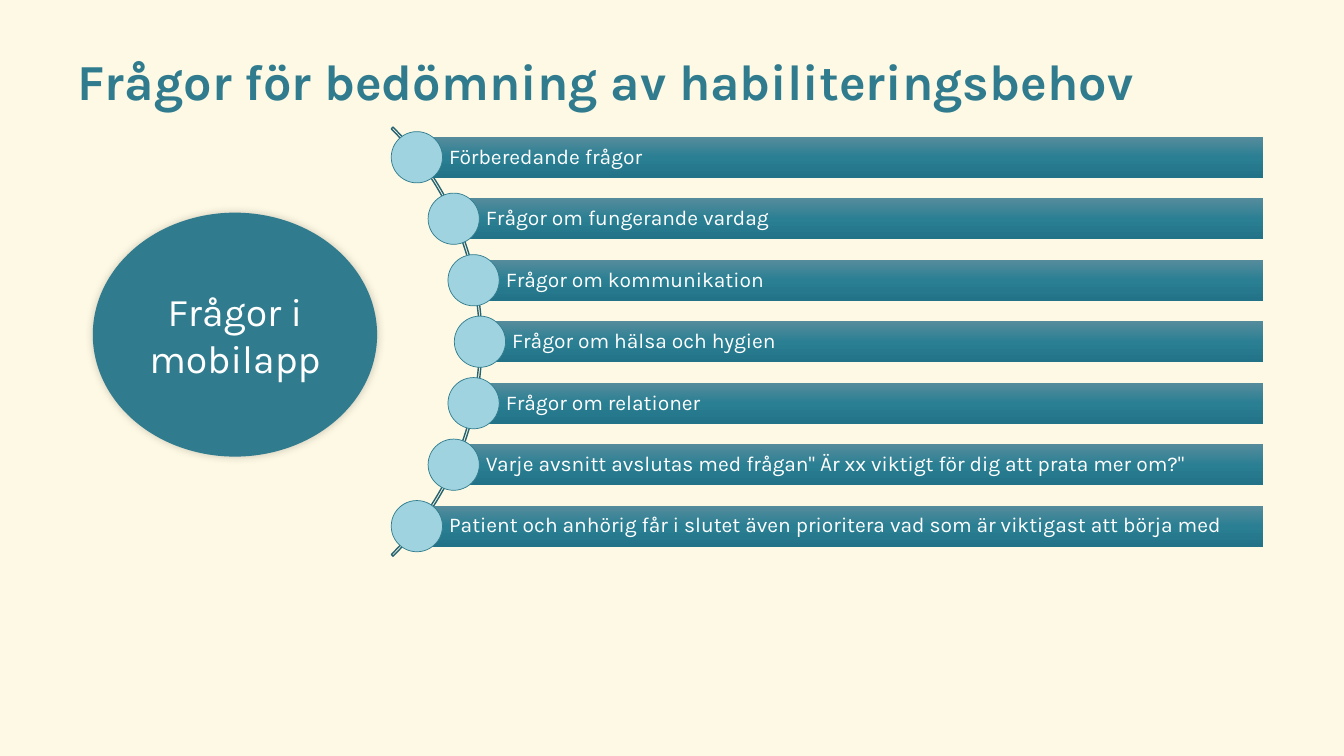
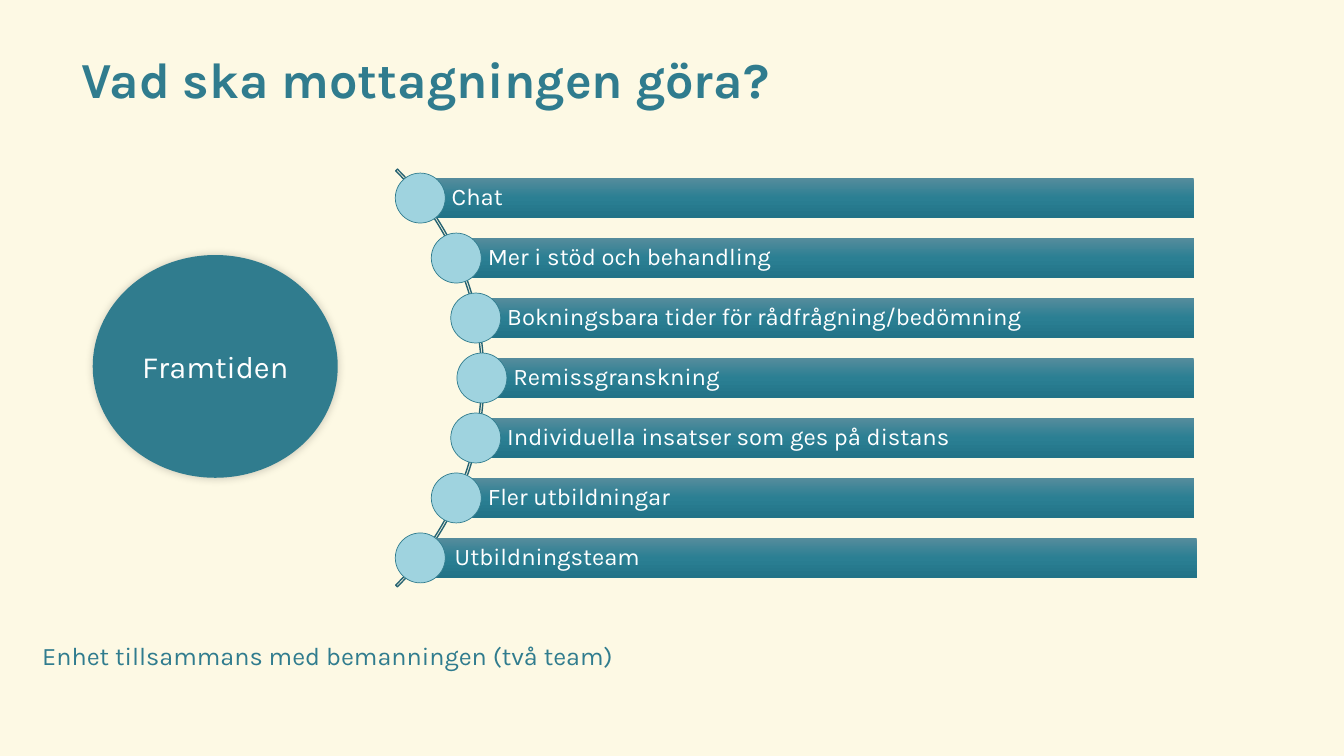
import copy
import math

import pptx
import pptx.util
import pptx.dml.color
import pptx.enum.shapes
import pptx.enum.text
import pptx.oxml
import pptx.oxml.ns

Inches = pptx.util.Inches
SHAPE = pptx.enum.shapes.MSO_SHAPE
ALIGN = pptx.enum.text.PP_ALIGN
ANCHOR = pptx.enum.text.MSO_ANCHOR

COLORS = {
    "cream": "FDF9E4", "teal": "307C8E", "arc": "266372", "dot": "9FD3DF",
    "white": "FFFFFF", "bar_top": "558C9C", "bar_mid": "2B7F93", "bar_end": "227387",
}
BAR_STOPS = [(0, "bar_top"), (0.5, "bar_mid"), (1, "bar_end")]
FONT = "Karla"
SHADOW = (
    f'<a:effectLst {pptx.oxml.ns.nsdecls("a")}>'
    '<a:outerShdw blurRad="76200" dist="0" dir="13500000" algn="ctr" rotWithShape="0">'
    '<a:srgbClr val="000000"><a:alpha val="20000"/></a:srgbClr>'
    '</a:outerShdw></a:effectLst>'
)

SLIDES = [
    {
        "title": ("Frågor för bedömning av habiliteringsbehov", (0.67, 0.39, 12, 0.82)),
        "hub": ("Frågor i mobilapp", (0.92, 2.11, 2.82, 2.42), 28),
        "fan": {"center": (1.77, 3.39), "radius": 3.01, "span": 3.66, "right": 12.53,
                "size": 15, "pad": 0.04, "shifts": {}},
        "items": [
            "Förberedande frågor",
            "Frågor om fungerande vardag",
            "Frågor om kommunikation",
            "Frågor om hälsa och hygien",
            "Frågor om relationer",
            "Varje avsnitt avslutas med frågan\" Är xx viktigt för dig att prata mer om?\"",
            "Patient och anhörig får i slutet även prioritera vad som är viktigast att börja med",
        ],
    },
    {
        "title": ("Vad ska mottagningen göra?", (0.71, 0.37, 12, 0.82)),
        "hub": ("Framtiden", (0.92, 2.53, 2.43, 2.21), 22),
        "fan": {"center": (1.87, 3.75), "radius": 2.93, "span": 3.57, "right": 11.84,
                "size": 17, "pad": 0.05, "shifts": {6: 0.03}},
        "items": [
            "Chat",
            "Mer i stöd och behandling",
            "Bokningsbara tider för rådfrågning/bedömning",
            "Remissgranskning",
            "Individuella insatser som ges på distans",
            "Fler utbildningar",
            "Utbildningsteam",
        ],
        "note": ("Enhet tillsammans med bemanningen (två team)", (0.32, 6.3, 6.68, 0.4)),
    },
]


def rgb(name):
    return pptx.dml.color.RGBColor.from_string(COLORS[name])


def set_text(sp, text, size, color, bold=False, frame=None, para=None):
    tf = sp.text_frame
    for key, value in {"word_wrap": True, **(frame or {})}.items():
        setattr(tf, key, value)
    p = tf.paragraphs[0]
    for key, value in (para or {}).items():
        setattr(p, key, value)
    r = p.add_run()
    r.text = text
    for key, value in {"name": FONT, "size": pptx.util.Pt(size), "bold": bold}.items():
        setattr(r.font, key, value)
    r.font.color.rgb = rgb(color)


def add_label(slide, text, box, size, **style):
    sp = slide.shapes.add_textbox(*map(Inches, box))
    set_text(sp, text, size, "teal", **style)


def add_shape(shapes, kind, box, fill=None, line=None, width=1):
    sp = shapes.add_shape(kind, *map(Inches, box))
    sp.shadow.inherit = False
    if fill:
        sp.fill.solid()
        sp.fill.fore_color.rgb = rgb(fill)
    else:
        sp.fill.background()
    if line:
        sp.line.color.rgb = rgb(line)
        sp.line.width = pptx.util.Pt(width)
    else:
        sp.line.fill.background()
    return sp


def shade_bar(sp):
    sp.fill.gradient()
    sp.fill.gradient_angle = 270
    stops = sp._element.spPr.find(".//" + pptx.oxml.ns.qn("a:gsLst"))
    stops.append(copy.deepcopy(stops[0]))
    for stop, (position, color) in zip(sp.fill.gradient_stops, BAR_STOPS):
        stop.position = position
        stop.color.rgb = rgb(color)


def add_hub(slide, text, box, size):
    sp = add_shape(slide.shapes, SHAPE.OVAL, box, "teal")
    spPr = sp._element.spPr
    spPr.replace(spPr.find(pptx.oxml.ns.qn("a:effectLst")), pptx.oxml.parse_xml(SHADOW))
    set_text(sp, text, size, "white", frame={"vertical_anchor": ANCHOR.MIDDLE},
             para={"alignment": ALIGN.CENTER})


def add_fan(slide, items, center, radius, span, right, size, pad, shifts):
    shapes = slide.shapes.add_group_shape().shapes
    cx, cy = center
    arc = add_shape(shapes, SHAPE.BLOCK_ARC,
                    (cx - radius, cy - radius, 2 * radius, 2 * radius), line="arc")
    for i, value in enumerate((189, 27, 0.004)):
        arc.adjustments[i] = value
    pitch = span / (len(items) - 1)
    dot = pitch / 1.2
    bar_height = dot * 0.8
    margins = {f"margin_{side}": Inches(pad) for side in ("right", "top", "bottom")}
    frame = {"vertical_anchor": ANCHOR.MIDDLE, "margin_left": Inches(dot * 0.63), **margins}
    for i, text in enumerate(items):
        dy = i * pitch - span / 2
        x = cx + math.sqrt((radius - 0.02) ** 2 - dy ** 2)
        y = cy + dy
        bar = add_shape(shapes, SHAPE.RECTANGLE,
                        (x + shifts.get(i, 0), y - bar_height / 2, right - x, bar_height))
        shade_bar(bar)
        set_text(bar, text, size, "white", frame=frame,
                 para={"alignment": ALIGN.LEFT, "line_spacing": 0.9})
        add_shape(shapes, SHAPE.OVAL, (x - dot / 2, y - dot / 2, dot, dot), "dot", "teal", 0.5)


def main():
    prs = pptx.Presentation()
    prs.slide_width, prs.slide_height = Inches(13.33), Inches(7.5)
    background = prs.slide_master.background.fill
    background.solid()
    background.fore_color.rgb = rgb("cream")
    for content in SLIDES:
        slide = prs.slides.add_slide(prs.slide_layouts[6])
        add_label(slide, *content["title"], 36, bold=True,
                  frame={"vertical_anchor": ANCHOR.TOP}, para={"line_spacing": 1.1})
        add_hub(slide, *content["hub"])
        add_fan(slide, content["items"], **content["fan"])
        if "note" in content:
            add_label(slide, *content["note"], 18)
    prs.save("out.pptx")


if __name__ == "__main__":
    main()
